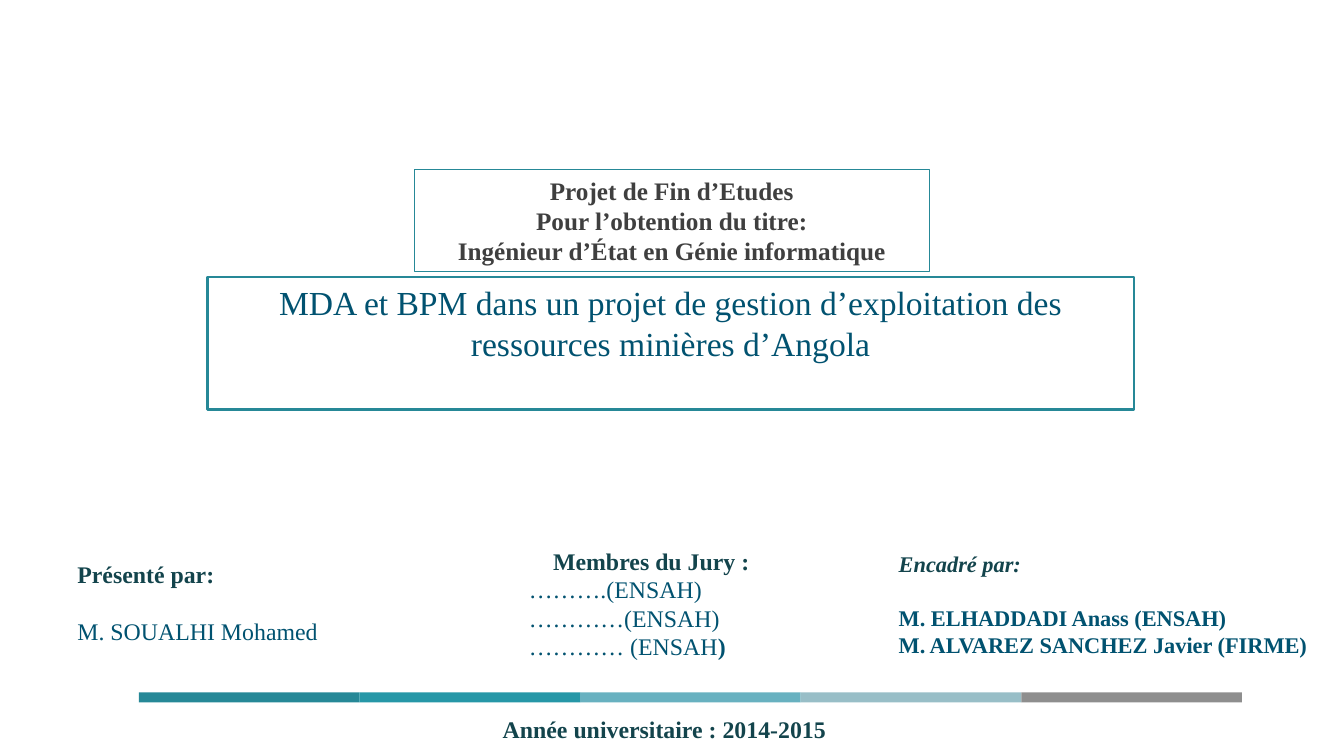
"""Build the title slide of an engineering degree project."""
from pptx import Presentation
from pptx.dml.color import RGBColor
from pptx.enum.shapes import MSO_SHAPE as SHAPE
from pptx.enum.text import MSO_ANCHOR as ANCHOR, PP_ALIGN as ALIGN
from pptx.util import Cm, Pt

COLORS = {
    "white": "FFFFFF",
    "teal": "268897",
    "blue": "015270",
    "dark": "13444C",
    "gray": "3F3F3F",
}
BAR_COLORS = ["268897", "2697A7", "68B1C0", "98BEC7", "8E8E8E"]
FONT = "Times New Roman"


def add_run(p, text, size=17, color="blue", bold=False, italic=False):
    r = p.add_run()
    r.text = text
    r.font.name = FONT
    r.font.size = Pt(size)
    r.font.bold = bold
    r.font.italic = italic
    r.font.color.rgb = RGBColor.from_string(COLORS[color])


def add_line(tf, text, align=ALIGN.LEFT, spacing=1.0, indent=0, **font):
    p = tf.paragraphs[0]
    if p.runs:
        p = tf.add_paragraph()
    p.alignment = align
    p.line_spacing = spacing
    if indent:
        p._p.get_or_add_pPr().set("indent", str(Cm(indent)))
    add_run(p, text, **font)
    return p


prs = Presentation()
prs.slide_width, prs.slide_height = Cm(33.87), Cm(19.05)
s = prs.slides.add_slide(prs.slide_layouts[6])

bar_left, bar_width = 3.5, 5.56
for i, color in enumerate(BAR_COLORS):
    sp = s.shapes.add_shape(SHAPE.RECTANGLE, Cm(bar_left + i * bar_width), Cm(17.45),
                            Cm(bar_width), Cm(0.25))
    sp.shadow.inherit = False
    sp.fill.solid()
    sp.fill.fore_color.rgb = RGBColor.from_string(color)
    sp.line.fill.background()

frames = []
for left, top, width, height, weight, anchor in [
    (5.23, 6.99, 23.34, 3.33, 1.5, ANCHOR.TOP),
    (10.44, 4.27, 12.98, 2.57, 1, ANCHOR.MIDDLE),
]:
    sp = s.shapes.add_shape(SHAPE.RECTANGLE, Cm(left), Cm(top), Cm(width), Cm(height))
    sp.shadow.inherit = False
    sp.fill.solid()
    sp.fill.fore_color.rgb = RGBColor.from_string(COLORS["white"])
    sp.line.color.rgb = RGBColor.from_string(COLORS["teal"])
    sp.line.width = Pt(weight)
    sp.text_frame.word_wrap = True
    sp.text_frame.vertical_anchor = anchor
    frames.append(sp.text_frame)
title, degree = frames

add_line(title, "MDA et BPM dans un projet de gestion d’exploitation des ressources minières d’Angola",
         align=ALIGN.CENTER, size=24)
for text in ["Projet de Fin d’Etudes", "Pour l’obtention du titre:",
             "Ingénieur d’État en Génie informatique"]:
    add_line(degree, text, align=ALIGN.CENTER, size=18, color="gray", bold=True)

frames = []
for left, top, width, height in [
    (12.42, 17.88, 10.9, 1.17),
    (1.7, 13.61, 7.11, 3.66),
    (22.4, 13.41, 10.87, 3.33),
    (13.08, 13.64, 10.26, 3.18),
]:
    tf = s.shapes.add_textbox(Cm(left), Cm(top), Cm(width), Cm(height)).text_frame
    tf.word_wrap = True
    frames.append(tf)
year, author, advisors, jury = frames

add_line(year, "Année universitaire : 2014-2015", color="dark", bold=True)

add_line(author, "Présenté par:", spacing=1.5, color="dark", bold=True)
add_line(author, "M. SOUALHI Mohamed", spacing=2.0)

add_line(advisors, "Encadré par:", spacing=1.5, size=16, color="dark", bold=True, italic=True)
add_line(advisors, "M. ELHADDADI Anass (ENSAH)", spacing=2.0, size=16, bold=True)
add_line(advisors, "M. ALVAREZ SANCHEZ Javier (FIRME)", size=16, bold=True)

add_line(jury, "Membres du Jury :", indent=0.61, color="dark", bold=True)
for text in ["……….(ENSAH)", "…………(ENSAH)"]:
    add_line(jury, text)
p = add_line(jury, "………… (ENSAH")
add_run(p, ")", bold=True)

prs.save("out.pptx")
